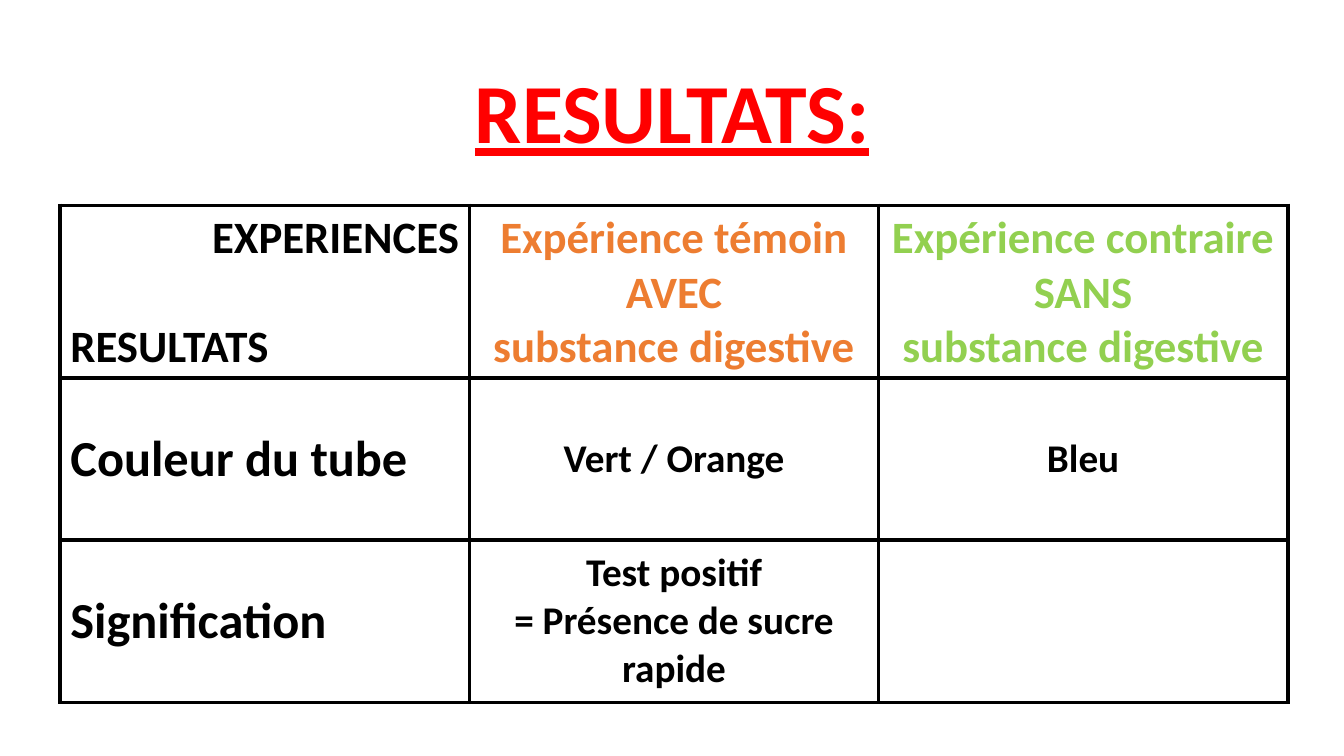
"""Build the slide showing the results table of the digestion experiments."""
from dataclasses import dataclass

from lxml import etree
from pptx import Presentation
from pptx.dml.color import RGBColor
from pptx.enum.text import MSO_ANCHOR, PP_ALIGN
from pptx.oxml.ns import qn
from pptx.slide import Slide
from pptx.table import _Cell
from pptx.text.text import _Paragraph
from pptx.util import Cm, Pt

LEFT, CENTER, RIGHT = PP_ALIGN.LEFT, PP_ALIGN.CENTER, PP_ALIGN.RIGHT
TOP, MIDDLE, BOTTOM = MSO_ANCHOR.TOP, MSO_ANCHOR.MIDDLE, MSO_ANCHOR.BOTTOM

BLACK = RGBColor(0x00, 0x00, 0x00)
RED = RGBColor(0xFF, 0x00, 0x00)
ORANGE = RGBColor(0xED, 0x7D, 0x31)
GREEN = RGBColor(0x92, 0xD0, 0x50)

FONT = "Calibri"
COLUMN_WIDTH = Cm(10.31)
ROW_HEIGHT = Cm(4.09)
BORDER_WIDTH = Pt(3)


@dataclass(frozen=True)
class Entry:
    lines: tuple[str, ...]
    size: int
    color: RGBColor = BLACK
    align: PP_ALIGN = CENTER
    anchor: MSO_ANCHOR = MIDDLE


ROWS = (
    (
        Entry(("EXPERIENCES", "RESULTATS"), 32, align=LEFT, anchor=TOP),
        Entry(("Expérience témoin", "AVEC", "substance digestive"), 32, ORANGE, anchor=TOP),
        Entry(("Expérience contraire", "SANS", "substance digestive"), 32, GREEN, anchor=TOP),
    ),
    (
        Entry(("Couleur du tube",), 36, align=LEFT),
        Entry(("Vert / Orange",), 28),
        Entry(("Bleu",), 28),
    ),
    (
        Entry(("Signification",), 36, align=LEFT),
        Entry(("Test positif", "= Présence de sucre rapide"), 28),
        Entry((), 28),
    ),
)


def format_paragraph(p: _Paragraph, size: int, color: RGBColor, align: PP_ALIGN) -> None:
    """Apply the bold slide font to every run of a paragraph."""
    p.alignment = align
    for r in p.runs:
        r.font.name = FONT
        r.font.size = Pt(size)
        r.font.bold = True
        r.font.color.rgb = color


def add_borders(cell: _Cell) -> None:
    """Draw a solid black line on the four sides of a cell."""
    tc_pr = cell._tc.get_or_add_tcPr()
    for side in ("a:lnL", "a:lnR", "a:lnT", "a:lnB"):
        line = etree.SubElement(tc_pr, qn(side), w=str(BORDER_WIDTH))
        fill = etree.SubElement(line, qn("a:solidFill"))
        etree.SubElement(fill, qn("a:srgbClr"), val=str(BLACK))


def fill_cell(cell: _Cell, entry: Entry) -> None:
    """Write an entry into a cell and style it."""
    add_borders(cell)
    cell.fill.background()
    cell.vertical_anchor = entry.anchor
    tf = cell.text_frame
    tf.text = "\n".join(entry.lines)
    for p in tf.paragraphs:
        format_paragraph(p, entry.size, entry.color, entry.align)


def add_title(s: Slide) -> None:
    """Add the underlined title."""
    tf = s.shapes.add_textbox(Cm(4.24), Cm(1.57), Cm(25.4), Cm(2.64)).text_frame
    tf.word_wrap = True
    tf.vertical_anchor = BOTTOM
    tf.text = "RESULTATS:"
    p = tf.paragraphs[0]
    p.line_spacing = 0.9
    format_paragraph(p, 60, RED, CENTER)
    p.runs[0].font.underline = True


def add_results(s: Slide) -> None:
    """Add the results table."""
    n_rows, n_cols = len(ROWS), len(ROWS[0])
    table = s.shapes.add_table(
        n_rows, n_cols, Cm(1.52), Cm(5.18), COLUMN_WIDTH * n_cols, ROW_HEIGHT * n_rows
    ).table
    table.first_row = False
    table.horz_banding = False
    for row, entries in zip(table.rows, ROWS):
        for cell, entry in zip(row.cells, entries):
            fill_cell(cell, entry)
    experiences, results = table.cell(0, 0).text_frame.paragraphs
    experiences.alignment = RIGHT
    results.space_before = Pt(39)


def main() -> None:
    """Create and save the presentation."""
    prs = Presentation()
    prs.slide_width, prs.slide_height = Cm(33.87), Cm(19.05)
    s = prs.slides.add_slide(prs.slide_layouts[6])
    add_title(s)
    add_results(s)
    prs.save("out.pptx")


if __name__ == "__main__":
    main()
